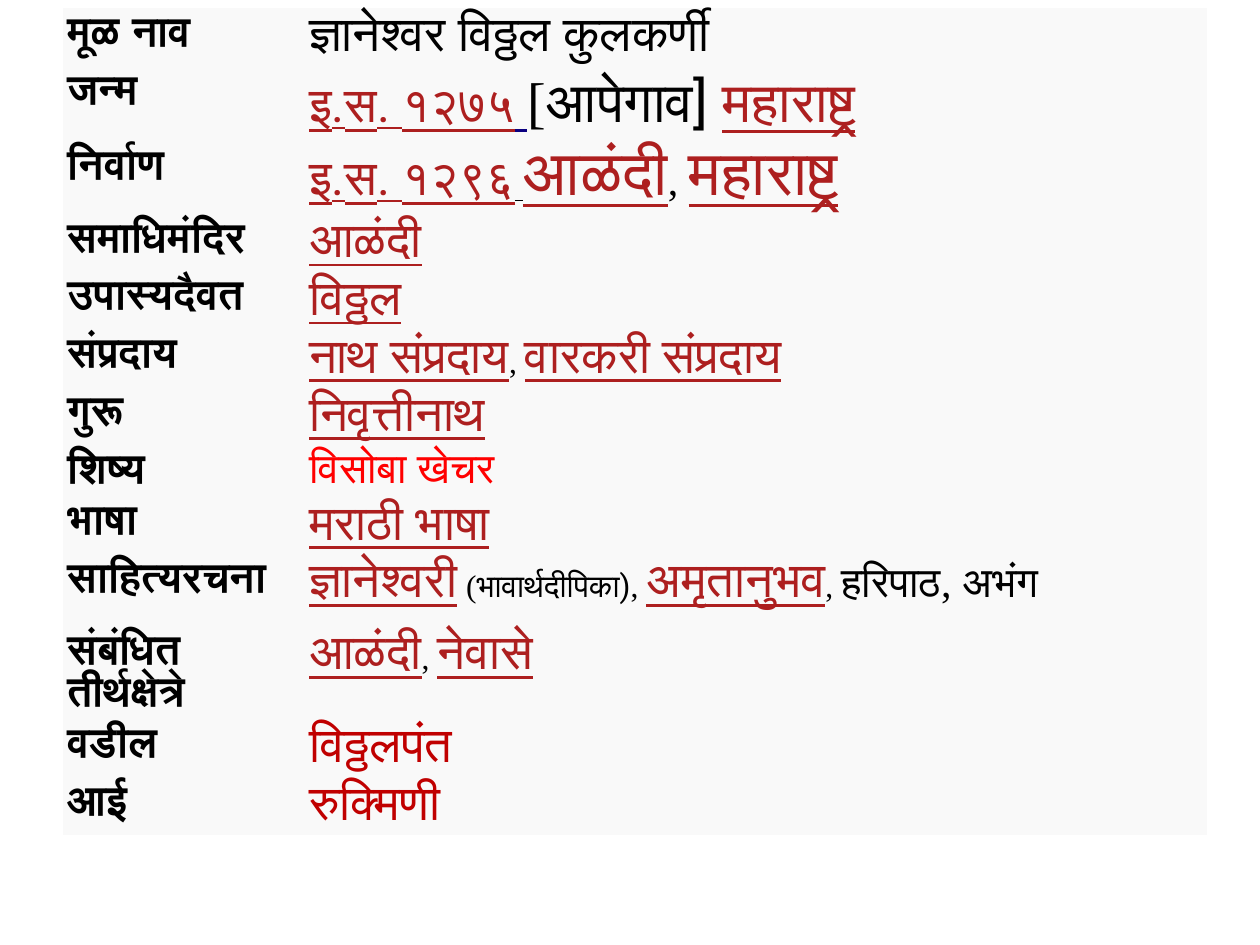
from pptx import Presentation
from pptx.dml.color import RGBColor
from pptx.oxml.ns import qn
from pptx.util import Cm, Pt

SANS, SERIF = "Roboto", "Times New Roman"
BLACK, LINK, NAVY, RED, DARK_RED = "000000", "AD1F1F", "0B0080", "FF0000", "C00000"
CELL_FILL = "F9F9F9"


def color(value):
    return RGBColor.from_string(value)


def add_text(paragraph, text, size=24, font=SANS, fill=BLACK, bold=False, underline=False):
    run = paragraph.add_run()
    run.text = text
    run.font.size = Pt(size)
    run.font.name = font
    run.font.bold = bold
    run.font.underline = underline
    run.font.color.rgb = color(fill)


def plain(text, size=28, fill=BLACK, font=SANS):
    return text, dict(size=size, fill=fill, font=font)


def link(text, size=28, fill=LINK, font=SANS):
    return text, dict(size=size, fill=fill, font=font, underline=True)


def comma(size=18, text=",\u00a0"):
    return plain(text, size, font=SERIF)


# label, row height in cm, runs of the value
FACTS = [
    ("मूळ नाव", 0.81, [plain("ज्ञानेश्वर विठ्ठल कुलकर्णी")]),
    ("जन्म", 1.4, [link("इ.स. १२७५"), link(" ", fill=NAVY), plain("[", 32, font=SERIF),
                   plain("आपेगाव] ", 32), link("महाराष्ट्र", 32)]),
    ("निर्वाण", 1.47, [link("इ.स. १२९६"), link(" ", 18, BLACK, SERIF), link("आळंदी", 36),
                      comma(24), link("महाराष्ट्र", 36)]),
    ("समाधिमंदिर", 1.04, [link("आळंदी")]),
    ("उपास्यदैवत", 1.04, [link("विठ्ठल")]),
    ("संप्रदाय", 1.04, [link("नाथ संप्रदाय"), comma(), link("वारकरी संप्रदाय")]),
    ("गुरू", 1.04, [link("निवृत्तीनाथ")]),
    ("शिष्य", 0.81, [plain("विसोबा खेचर", 24, RED)]),
    ("भाषा", 1.04, [link("मराठी भाषा")]),
    ("साहित्यरचना", 1.45, [link("ज्ञानेश्वरी"), plain("\u00a0(", 18, font=SERIF),
                          plain("भावार्थदीपिका)", 18), comma(), link("अमृतानुभव"),
                          comma(text=", "), plain("हरिपाठ", 24),
                          comma(24, ", "), plain("अभंग", 24)]),
    ("संबंधित तीर्थक्षेत्रे", 1.04, [link("आळंदी"), comma(), link("नेवासे")]),
    ("वडील", 0.81, [plain("विठ्ठलपंत", fill=DARK_RED)]),
    ("आई", 0.69, [plain("रुक्मिणी", fill=DARK_RED)]),
]


def fill_cell(cell, runs):
    cell.margin_left = cell.margin_right = cell.margin_top = cell.margin_bottom = Cm(0.09)
    cell.fill.solid()
    cell.fill.fore_color.rgb = color(CELL_FILL)
    for text, style in runs:
        add_text(cell.text_frame.paragraphs[0], text, **style)


def add_fact_table(slide, left, top, width, label_width):
    height = sum(row_height for _, row_height, _ in FACTS)
    table = slide.shapes.add_table(
        len(FACTS), 2, Cm(left), Cm(top), Cm(width), Cm(height)).table
    table.first_row = table.horz_banding = False
    # "No Style, No Grid", so that no cell borders are drawn
    table._tbl.tblPr.find(qn("a:tableStyleId")).text = "{2D5ABB26-0587-4C30-8999-92F81FD0307C}"
    table.columns[0].width = Cm(label_width)
    table.columns[1].width = Cm(width - label_width)
    for row, (label, row_height, value) in zip(table.rows, FACTS):
        row.height = Cm(row_height)
        fill_cell(row.cells[0], [(label, dict(bold=True))])
        fill_cell(row.cells[1], value)


def main():
    presentation = Presentation()
    presentation.slide_width, presentation.slide_height = Cm(25.4), Cm(19.05)
    slide = presentation.slides.add_slide(presentation.slide_layouts[6])
    add_fact_table(slide, left=1.27, top=0.17, width=23.07, label_width=4.87)
    presentation.save("out.pptx")


if __name__ == "__main__":
    main()
